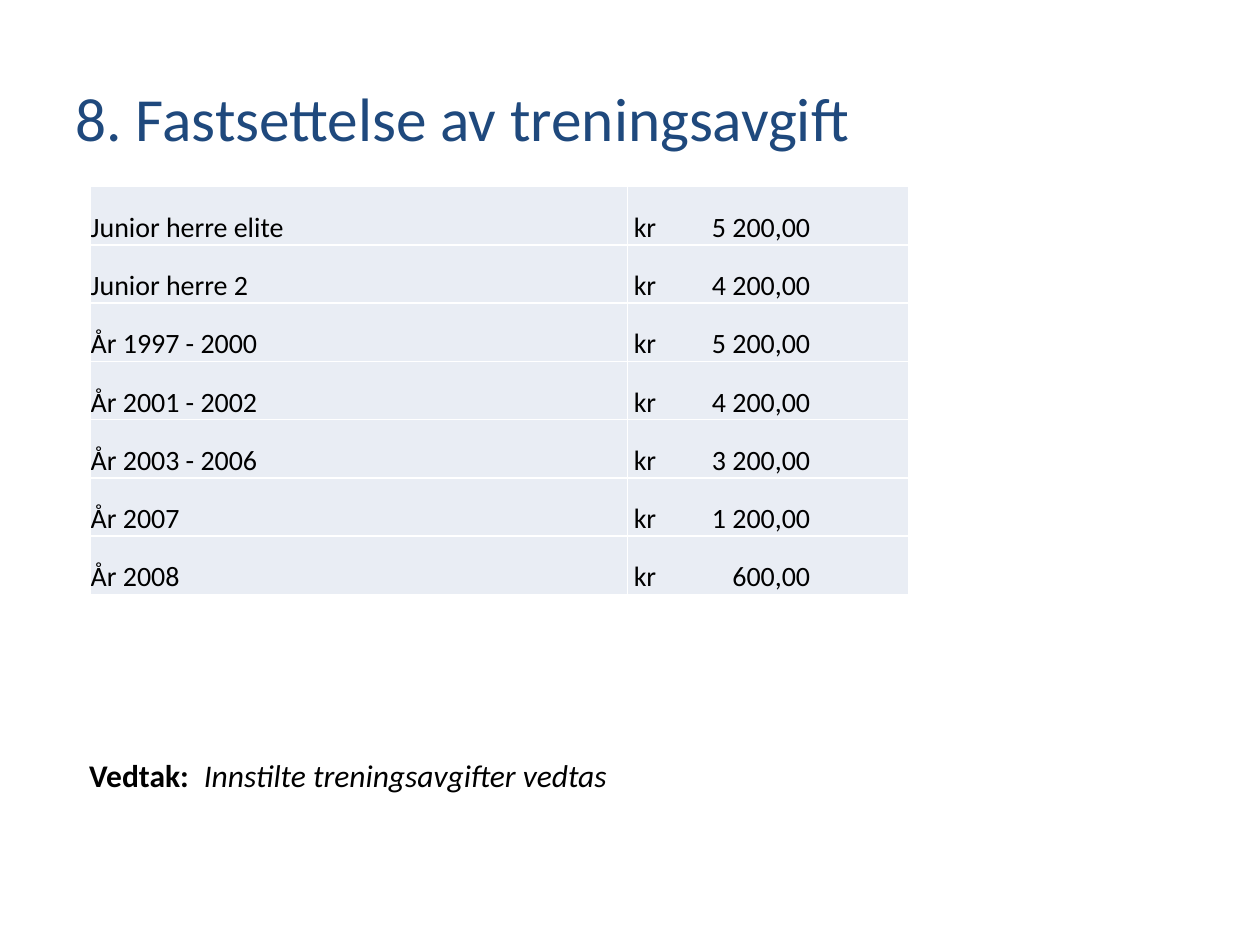
from lxml import etree
from pptx import Presentation
from pptx.dml.color import RGBColor
from pptx.enum import text as t
from pptx.oxml import ns
from pptx.util import Inches, Pt

NAVY = RGBColor(0x1F, 0x49, 0x7D)
BLACK = RGBColor(0, 0, 0)
PALE = RGBColor(0xE9, 0xED, 0xF4)
WHITE = RGBColor(0xFF, 0xFF, 0xFF)

FEES = [
    ("Junior herre elite", "5 200,00"),
    ("Junior herre 2", "4 200,00"),
    ("År 1997 - 2000", "5 200,00"),
    ("År 2001 - 2002", "4 200,00"),
    ("År 2003 - 2006", "3 200,00"),
    ("År 2007", "1 200,00"),
    ("År 2008", "600,00"),
]


def write(para, words, size=16, color=BLACK, bold=False, italic=False, tab=None, side="l"):
    """Add a run to para; tab is the place of a tab stop in inches."""
    if tab:
        stops = etree.SubElement(para._p.get_or_add_pPr(), ns.qn("a:tabLst"))
        etree.SubElement(stops, ns.qn("a:tab"), pos=str(Inches(tab)), algn=side)
    run = para.add_run()
    run.text = words
    font = run.font
    font.name, font.size, font.bold, font.italic = "Calibri", Pt(size), bold, italic
    font.color.rgb = color


def rule(cell):
    """Draw thin white borders round a cell."""
    for edge in ("lnL", "lnR", "lnT", "lnB"):
        line = etree.SubElement(cell._tc.get_or_add_tcPr(), ns.qn("a:" + edge), w=str(Pt(1)))
        fill = etree.SubElement(line, ns.qn("a:solidFill"))
        etree.SubElement(fill, ns.qn("a:srgbClr"), val=str(WHITE))


prs = Presentation()
prs.slide_width, prs.slide_height = Inches(10), Inches(7.5)
slide = prs.slides.add_slide(prs.slide_layouts[5])

# Title
title = slide.shapes.title
title.left, title.top = Inches(0.5), Inches(0.3)
title.width, title.height = Inches(9), Inches(1.25)
title.text_frame.vertical_anchor = t.MSO_ANCHOR.MIDDLE
head = title.text_frame.paragraphs[0]
head.alignment = t.PP_ALIGN.LEFT
write(head, "8. Fastsettelse av treningsavgift", size=35, color=NAVY)

# Fee table
table = slide.shapes.add_table(
    len(FEES), 2, Inches(0.72), Inches(1.48), Inches(6.5), Inches(3.24)).table
table.first_row = table.horz_banding = False
table.columns[0].width, table.columns[1].width = Inches(4.26), Inches(2.23)
for row, (group, fee) in zip(table.rows, FEES):
    for cell in row.cells:
        cell.margin_left = cell.margin_right = cell.margin_top = cell.margin_bottom = 0
        cell.vertical_anchor = t.MSO_ANCHOR.BOTTOM
        rule(cell)
        cell.fill.solid()
        cell.fill.fore_color.rgb = PALE
    name, price = row.cells
    price.margin_left = Inches(0.05)
    write(name.text_frame.paragraphs[0], group)
    write(price.text_frame.paragraphs[0], "kr\t" + fee, tab=1.4, side="r")

# Decision
box = slide.shapes.add_textbox(Inches(0.61), Inches(5.95), Inches(5), Inches(0.4))
box.text_frame.word_wrap = True
note = box.text_frame.paragraphs[0]
write(note, "Vedtak:\t", size=18, bold=True, tab=0.91)
write(note, "Innstilte treningsavgifter vedtas", size=18, italic=True)

prs.save("out.pptx")
